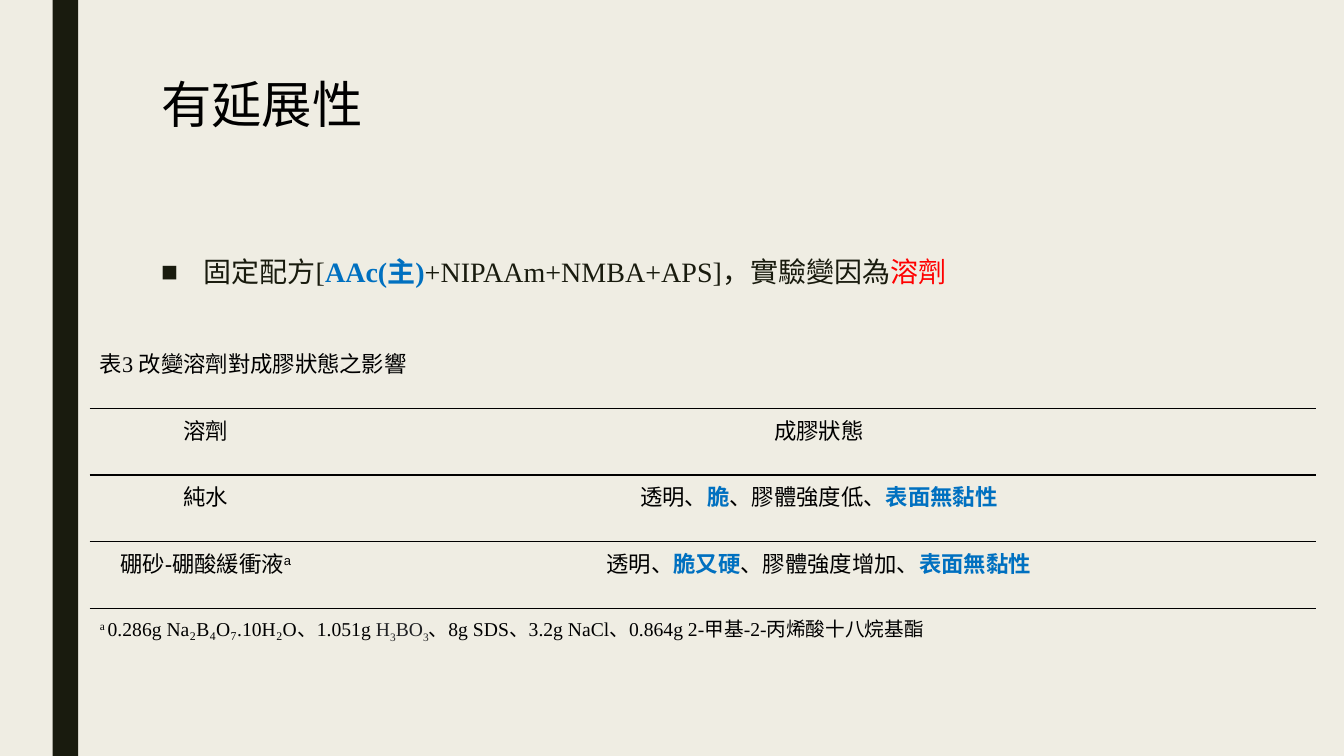
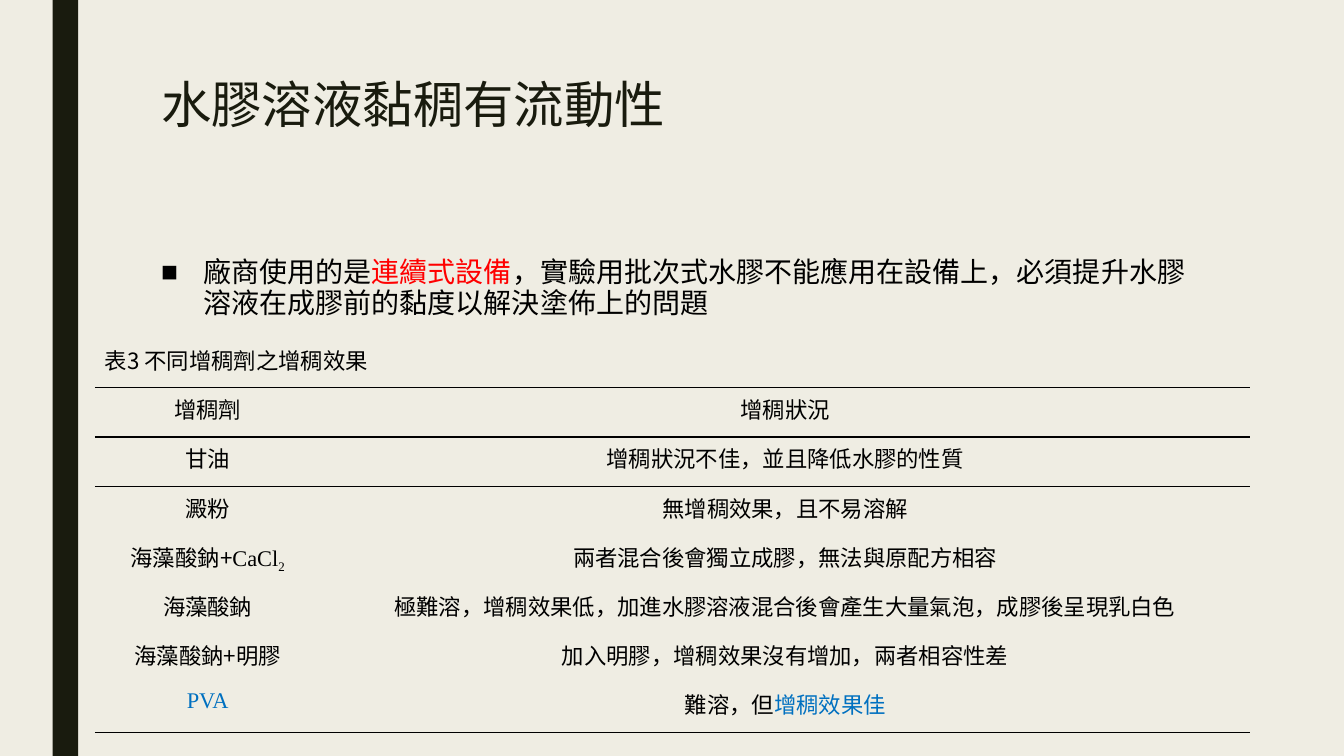
import pptx
import pptx.dml.color
import pptx.enum.shapes
import pptx.enum.text
import pptx.oxml
import pptx.oxml.ns
import pptx.util

Cm, Pt = pptx.util.Cm, pptx.util.Pt
NS = 'xmlns:a="http://schemas.openxmlformats.org/drawingml/2006/main"'
INK, CREAM, BLACK, BLUE, RED = "191B0E", "EFEDE3", "000000", "0070C0", "FF0000"
TC, SC, TIMES, KARLA, ARIAL = (
    "Noto Sans CJK TC", "Noto Sans CJK SC", "Times New Roman", "Karla", "Arial")


def paint(fill, color):
    fill.solid()
    fill.fore_color.rgb = pptx.dml.color.RGBColor.from_string(color)


def write(paragraph, runs, base):
    for text, changes in runs:
        style = {**base, **changes}
        run = paragraph.add_run()
        run.text = text
        for key in ("size", "name", "bold"):
            if key in style:
                setattr(run.font, key, style[key])
        paint(run.font.fill, style["color"])
        properties = run.font._element
        if "shift" in style:
            properties.set("baseline", str(style["shift"] * 1000))
        face = style["name"] if style["name"] in (TC, SC) else TC
        properties.append(pptx.oxml.parse_xml(f'<a:ea {NS} typeface="{face}"/>'))


KEY = {"color": BLUE, "bold": True}
WARN = {"color": RED}
LATIN = {"name": TIMES}
ACID = {"name": TIMES, "color": "202124"}
SUB = {"shift": -25}
SUPER = {"shift": 30}

stretch_rows = [
    [[("表3 改變溶劑對成膠狀態之影響", LATIN)]],
    [[("溶劑", LATIN)], [("成膠狀態", LATIN)]],
    [[("純水", {})],
     [("透明、", {}), ("脆", KEY), ("、膠體強度低、", {}), ("表面無黏性", KEY)]],
    [[("硼砂-硼酸緩衝液", {}), ("a", SUPER)],
     [("透明、", {}), ("脆又硬", KEY), ("、膠體強度增加、", {}), ("表面無黏性", KEY)]],
    [[(text, {"size": Pt(14), **style}) for text, style in (
        ("a ", {**LATIN, **SUPER}),
        ("0.286g Na₂B₄O₇.10H₂O、1.051g ", LATIN),
        ("H", ACID), ("3", {**ACID, **SUB}), ("BO", ACID), ("3", {**ACID, **SUB}),
        ("、8g SDS、3.2g NaCl、0.864g 2-", LATIN),
        ("甲基", {}), ("-2-", LATIN), ("丙烯酸十八烷基酯", {}))]],
]
thickener_rows = [
    [[("表3 不同增稠劑之增稠效果", {})]],
    [[("增稠劑", {})], [("增稠狀況", {})]],
    [[("甘油", {})], [("增稠狀況不佳，並且降低水膠的性質", {})]],
    [[("澱粉", {})], [("無增稠效果，且不易溶解", {})]],
    [[("海藻酸鈉+", {}), ("CaCl", LATIN), ("2", {**LATIN, **SUB})],
     [("兩者混合後會獨立成膠，無法與原配方相容", {})]],
    [[("海藻酸鈉", {})],
     [("極難溶，增稠效果低，加進水膠溶液混合後會產生大量氣泡，成膠後呈現乳白色", {})]],
    [[("海藻酸鈉+明膠", {})], [("加入明膠，增稠效果沒有增加，兩者相容性差", {})]],
    [[("PVA", {"name": TIMES, "color": BLUE})],
     [("難溶，但", {}), ("增稠效果佳", {"name": SC, "color": BLUE})]],
]
topics = [
    {
        "title": [("有延展性", {"name": TC, "color": BLACK})],
        "point": [
            ("固定配方", {}), ("[", LATIN), ("AAc(主)", {**LATIN, **KEY}),
            ("+NIPAAm+NMBA+APS]", LATIN), ("，實驗變因為", {}), ("溶劑", WARN)],
        "point_style": {"name": KARLA, "color": INK},
        "rows": stretch_rows, "font": ARIAL, "rules": (1, 2, 4),
        "corner": (2.26, 8.61), "widths": (5.84, 25.07), "row_height": 1.68,
    },
    {
        "title": [("水膠溶液黏稠有流動性", {"name": KARLA, "color": INK})],
        "point": [
            ("廠商使用的是", {}), ("連續式設備", WARN),
            ("，實驗用批次式水膠不能應用在設備上，必須提升水膠溶液在成膠前的黏度以解決塗佈上的問題", {})],
        "point_style": {"name": TC, "color": BLACK},
        "rows": thickener_rows, "font": TC, "rules": (1, 2, 8),
        "corner": (2.39, 8.53), "widths": (5.69, 23.42), "row_height": 1.24,
    },
]

deck = pptx.Presentation()
deck.slide_width, deck.slide_height = Cm(33.87), Cm(19.05)

for topic in topics:
    slide = deck.slides.add_slide(deck.slide_layouts[6])
    paint(slide.background.fill, CREAM)
    band = slide.shapes.add_shape(
        pptx.enum.shapes.MSO_SHAPE.RECTANGLE, Cm(1.33), 0, Cm(0.64), deck.slide_height)
    band.shadow.inherit = False
    paint(band.fill, INK)
    band.line.fill.background()

    for part, top, height, style, spacing in (
        ("title", 1.9, 4.11, {"size": Pt(36)}, {"line_spacing": 0.89}),
        ("point", 6.35, 9.96, {"size": Pt(20), **topic["point_style"]},
         {"line_spacing": 0.94, "space_before": Pt(10), "space_after": Pt(2)}),
    ):
        frame = slide.shapes.add_textbox(Cm(3.81), Cm(top), Cm(26.67), Cm(height)).text_frame
        frame.word_wrap = True
        paragraph = frame.paragraphs[0]
        for key, value in spacing.items():
            setattr(paragraph, key, value)
        write(paragraph, topic[part], style)
    bulleted = paragraph._p.get_or_add_pPr()
    bulleted.set("marL", str(Cm(1.07)))
    bulleted.set("indent", str(-Cm(1.07)))
    for bullet in ('buFont {} typeface="Arial"', 'buChar {} char="■"'):
        bulleted.append(pptx.oxml.parse_xml(f"<a:{bullet.format(NS)}/>"))

    rows, widths, row_height = topic["rows"], topic["widths"], topic["row_height"]
    left, top = topic["corner"]
    table = slide.shapes.add_table(
        len(rows), len(widths), Cm(left), Cm(top),
        Cm(sum(widths)), Cm(row_height * len(rows))).table
    table.first_row = table.horz_banding = False
    table._tbl.tblPr.find(pptx.oxml.ns.qn("a:tableStyleId")).text = (
        "{2D5ABB26-0587-4C30-8999-92F81FD0307C}")
    for column, width in zip(table.columns, widths):
        column.width = Cm(width)
    for index, contents in enumerate(rows):
        table.rows[index].height = Cm(row_height)
        spans = len(contents) == 1
        if spans:
            table.cell(index, 0).merge(table.cell(index, len(widths) - 1))
        for cell, runs in zip(table.rows[index].cells, contents):
            paragraph = cell.text_frame.paragraphs[0]
            if not spans:
                paragraph.alignment = pptx.enum.text.PP_ALIGN.CENTER
            write(paragraph, runs, {"size": Pt(16), "name": topic["font"], "color": BLACK})
        for cell in table.rows[index].cells:
            edges = [edge for edge, line in (("lnT", index), ("lnB", index + 1))
                     if line in topic["rules"]]
            borders = cell._tc.get_or_add_tcPr()
            for edge in edges:
                borders.append(pptx.oxml.parse_xml(
                    f'<a:{edge} {NS} w="{Pt(1)}"><a:solidFill>'
                    f'<a:srgbClr val="{BLACK}"/></a:solidFill></a:{edge}>'))
            cell.fill.background()

deck.save("out.pptx")
